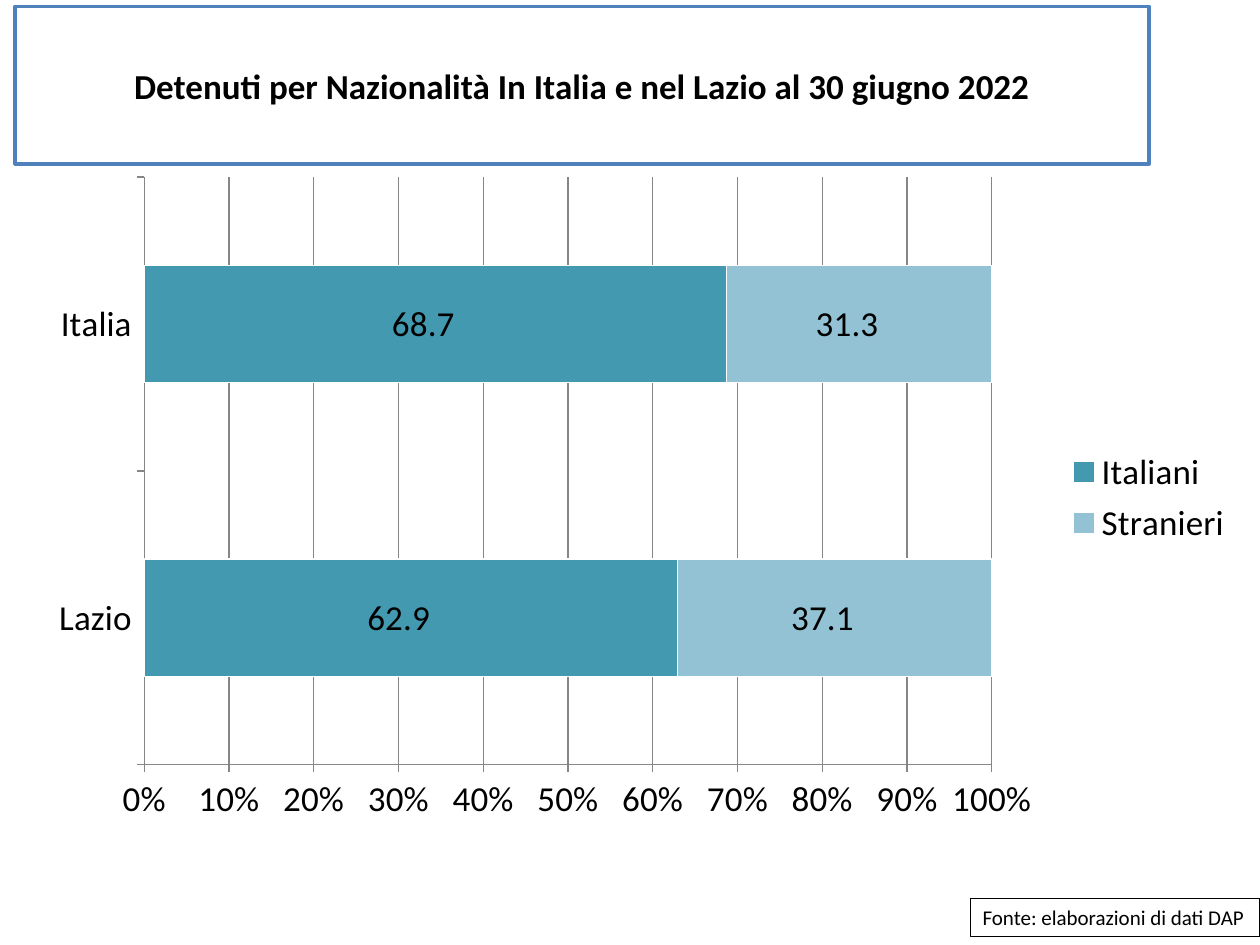
from dataclasses import dataclass

from lxml.etree import SubElement
from pptx import Presentation
from pptx.chart.chart import Chart
from pptx.chart.data import CategoryChartData
from pptx.dml.color import RGBColor
from pptx.enum.chart import (XL_CHART_TYPE, XL_LABEL_POSITION,
                             XL_LEGEND_POSITION, XL_TICK_MARK)
from pptx.enum.shapes import MSO_SHAPE
from pptx.enum.text import MSO_ANCHOR, PP_ALIGN
from pptx.oxml.ns import qn
from pptx.slide import Slide
from pptx.util import Pt

WHITE = RGBColor(0xFF, 0xFF, 0xFF)
BLACK = RGBColor(0, 0, 0)
BLUE = RGBColor(0x4F, 0x81, 0xBD)
TEAL = RGBColor(0x42, 0x99, 0xB0)
PALE_TEAL = RGBColor(0x92, 0xC2, 0xD4)
GREY = RGBColor(0x86, 0x86, 0x86)
FONT = "Calibri"
VALUE_FORMAT = "_-* #,##0.0\\ _€_-"


@dataclass
class Panel:
    text: str
    box: tuple[float, float, float, float]
    border: RGBColor
    border_width: float
    size: float
    bold: bool
    align: PP_ALIGN
    wrap: bool


@dataclass
class Group:
    name: str
    shares: tuple[float, float]
    color: RGBColor


PANELS = [
    Panel("Detenuti per Nazionalità In Italia e nel Lazio al 30 giugno 2022",
          (8.64, 3.6, 648, 90), BLUE, 2, 20, True, PP_ALIGN.CENTER, True),
    Panel("Fonte: elaborazioni di dati DAP",
          (554.4, 513.4, 165.6, 21.8), BLACK, 0.75, 12, False, PP_ALIGN.LEFT, False),
]
REGIONS = ["Lazio", "Italia"]
GROUPS = [
    Group("Italiani", (62.9, 68.7), TEAL),
    Group("Stranieri", (37.1, 31.3), PALE_TEAL),
]
CHART_BOX = (20.16, 93.6, 691.92, 381.6)
PLOT_LAYOUT = {"layoutTarget": "inner", "xMode": "edge", "yMode": "edge",
               "x": "0.09", "y": "0.02", "w": "0.7", "h": "0.88"}


def set_format(target: object, values: dict) -> None:
    for name, value in values.items():
        setattr(target, name, value)


def set_font(font: object, size: float, bold: bool = False) -> None:
    set_format(font, {"name": FONT, "size": Pt(size), "bold": bold})
    font.color.rgb = BLACK


def add_panel(slide: Slide, panel: Panel) -> None:
    shape = slide.shapes.add_shape(MSO_SHAPE.RECTANGLE, *map(Pt, panel.box))
    shape.shadow.inherit = False
    shape.fill.solid()
    shape.fill.fore_color.rgb = WHITE
    shape.line.color.rgb = panel.border
    shape.line.width = Pt(panel.border_width)
    frame = shape.text_frame
    set_format(frame, {"word_wrap": panel.wrap, "vertical_anchor": MSO_ANCHOR.MIDDLE})
    paragraph = frame.paragraphs[0]
    paragraph.alignment = panel.align
    run = paragraph.add_run()
    run.text = panel.text
    set_font(run.font, panel.size, panel.bold)


def place_plot(chart: Chart) -> None:
    plot_area = chart.plots[0]._element.getparent()
    layout = plot_area.find(qn("c:layout"))
    if layout is None:
        layout = SubElement(plot_area, qn("c:layout"))
        plot_area.insert(0, layout)
    manual = SubElement(layout, qn("c:manualLayout"))
    for tag, value in PLOT_LAYOUT.items():
        SubElement(manual, qn(f"c:{tag}")).set("val", value)


def add_share_chart(slide: Slide) -> None:
    data = CategoryChartData(number_format=VALUE_FORMAT)
    data.categories = REGIONS
    for group in GROUPS:
        data.add_series(group.name, group.shares)
    chart = slide.shapes.add_chart(XL_CHART_TYPE.BAR_STACKED_100,
                                   *map(Pt, CHART_BOX), data).chart
    set_font(chart.font, 20)
    set_format(chart, {"has_title": False, "has_legend": True})
    set_format(chart.legend, {"position": XL_LEGEND_POSITION.RIGHT,
                              "include_in_layout": False})
    place_plot(chart)

    # Bars and their values
    plot = chart.plots[0]
    set_format(plot, {"gap_width": 150, "overlap": 100, "vary_by_categories": False})
    for series, group in zip(plot.series, GROUPS):
        series.format.fill.solid()
        series.format.fill.fore_color.rgb = group.color
        series.format.line.color.rgb = WHITE
        series.format.line.width = Pt(0.75)
        labels = series.data_labels
        set_format(labels, {"show_value": True, "position": XL_LABEL_POSITION.CENTER,
                            "number_format": VALUE_FORMAT,
                            "number_format_is_linked": False})
        set_font(labels.font, 20)

    # Axes
    regions, percent = chart.category_axis, chart.value_axis
    for axis in (regions, percent):
        set_format(axis, {"major_tick_mark": XL_TICK_MARK.OUTSIDE,
                          "minor_tick_mark": XL_TICK_MARK.NONE})
        set_font(axis.tick_labels.font, 20)
        axis.format.line.color.rgb = GREY
    set_format(percent, {"minimum_scale": 0, "maximum_scale": 1, "major_unit": 0.1,
                         "has_major_gridlines": True})
    percent.major_gridlines.format.line.color.rgb = GREY
    set_format(percent.tick_labels, {"number_format": "0%",
                                     "number_format_is_linked": False})


def main() -> None:
    deck = Presentation()
    set_format(deck, {"slide_width": Pt(720), "slide_height": Pt(540)})
    slide = deck.slides.add_slide(deck.slide_layouts[6])
    # Title and source note
    for panel in PANELS:
        add_panel(slide, panel)
    # Shares by nationality
    add_share_chart(slide)
    deck.save("out.pptx")


if __name__ == "__main__":
    main()
